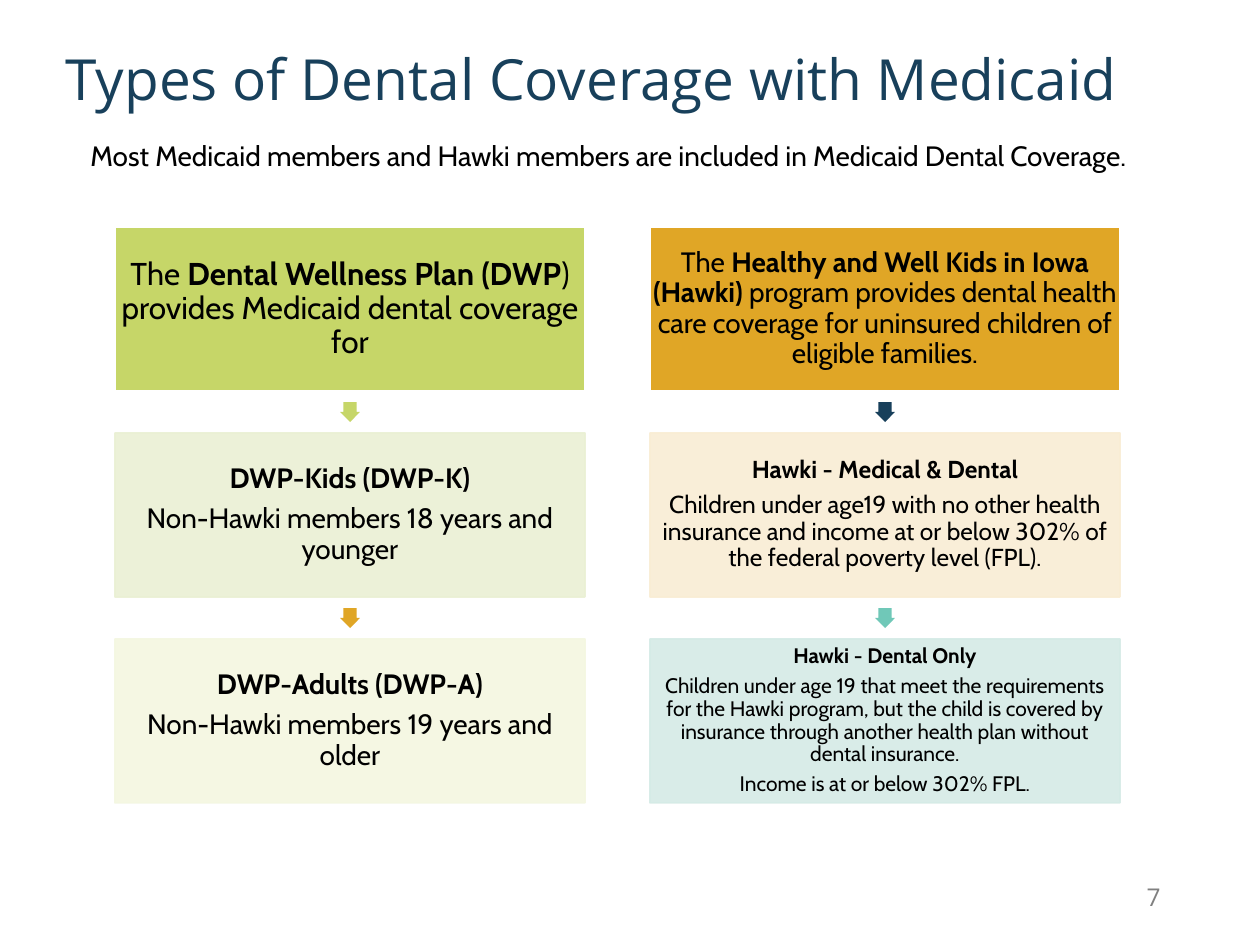
from lxml.etree import SubElement
from pptx import Presentation
from pptx.dml.color import RGBColor
from pptx.enum.shapes import MSO_SHAPE
from pptx.enum.text import MSO_ANCHOR, PP_ALIGN
from pptx.oxml.ns import qn
from pptx.util import Emu, Pt

EMU_PER_PX = 914400 / 126
BOX_WIDTH, BOX_HEIGHT, ROW_PITCH = 470, 164, 206
ARROW_SIZE = 20
TOP, LEFTS = 227, (115, 650)

# Each box: fill, line, opacity, text size, inset, paragraphs of (text, bold) runs
DWP_BOXES = [
    ("C6D668", "FFFFFF", 100, 18, 4, [
        [("The ", False), ("Dental Wellness Plan (DWP", True),
         (") provides Medicaid dental coverage for", False)]]),
    ("EAF0D4", "EAF0D4", 90, 16, 3, [
        [("DWP-Kids (DWP-K)", True)],
        [("Non-Hawki members 18 years and younger", False)]]),
    ("F4F7E1", "F4F7E1", 90, 16, 3, [
        [("DWP-Adults (DWP-A)", True)],
        [("Non-Hawki members 19 years and older", False)]]),
]
HAWKI_BOXES = [
    ("E0A626", "FFFFFF", 100, 16, 3, [
        [("The ", False), ("Healthy and Well Kids in Iowa (Hawki) ", True),
         ("program provides dental health care coverage for uninsured "
          "children of eligible families.", False)]]),
    ("F9EDD4", "F9EDD4", 90, 14, 3, [
        [("Hawki - Medical & Dental", True)],
        [("Children under age19 with no other health insurance and income at "
          "or below 302% of the federal poverty level (FPL).", False)]]),
    ("D5EBE6", "D5EBE6", 90, 12, 3, [
        [("Hawki - Dental Only", True)],
        [("Children under age 19 that meet the requirements for the Hawki "
          "program, but the child is covered by insurance through another "
          "health plan without dental insurance.", False)],
        [("Income is at or below 302% FPL.", False)]]),
]
COLUMNS = [(DWP_BOXES, ("C6D668", "E0A626")),
           (HAWKI_BOXES, ("18405B", "70C8B8"))]


def px(*lengths):
    return [Emu(round(length * EMU_PER_PX)) for length in lengths]


def color(hex_string):
    return RGBColor.from_string(hex_string)


def set_font(paragraph, name, size, hex_string):
    paragraph.font.name = name
    paragraph.font.size = Pt(size)
    paragraph.font.color.rgb = color(hex_string)


def add_filled_shape(slide, kind, box, fill, opacity=100):
    shape = slide.shapes.add_shape(kind, *px(*box))
    shape.shadow.inherit = False
    shape.fill.solid()
    shape.fill.fore_color.rgb = color(fill)
    shape.line.fill.background()
    set_opacity(shape, opacity)
    return shape


def set_opacity(shape, opacity):
    if opacity < 100:
        for element in shape.element.spPr.iter(qn("a:srgbClr")):
            if len(element) == 0:
                SubElement(element, qn("a:alpha")).set("val", str(opacity * 1000))


def add_title(slide, box):
    title = slide.shapes.title
    title.left, title.top, title.width, title.height = px(*box)
    frame = title.text_frame
    frame.text = "Types of Dental Coverage with Medicaid"
    frame.word_wrap = True
    frame.vertical_anchor = MSO_ANCHOR.MIDDLE
    paragraph = frame.paragraphs[0]
    paragraph.alignment = PP_ALIGN.LEFT
    paragraph.line_spacing = 0.9
    set_font(paragraph, "Open Sans", 32.4, "18405B")


def add_text(slide, box, text, name, size, hex_string, alignment):
    frame = slide.shapes.add_textbox(*px(*box)).text_frame
    frame.word_wrap = True
    paragraph = frame.paragraphs[0]
    paragraph.text = text
    paragraph.alignment = alignment
    set_font(paragraph, name, size, hex_string)


def add_coverage_box(slide, box, content):
    fill, line, opacity, size, inset, paragraphs = content
    shape = add_filled_shape(slide, MSO_SHAPE.RECTANGLE, box, fill)
    shape.line.color.rgb = color(line)
    shape.line.width = Pt(1)
    set_opacity(shape, opacity)

    frame = shape.text_frame
    frame.word_wrap = True
    frame.vertical_anchor = MSO_ANCHOR.MIDDLE
    (frame.margin_left, frame.margin_top,
     frame.margin_right, frame.margin_bottom) = px(*[inset] * 4)
    for index, runs in enumerate(paragraphs):
        paragraph = frame.add_paragraph() if index else frame.paragraphs[0]
        paragraph.alignment = PP_ALIGN.CENTER
        paragraph.line_spacing = 0.9
        paragraph.space_after = Pt(size * 0.35)
        set_font(paragraph, "Cabin", size, "000000")
        for text, bold in runs:
            run = paragraph.add_run()
            run.text = text
            run.font.bold = bold


def add_column(slide, left, top, boxes, arrow_colors):
    for row, content in enumerate(boxes):
        box = (left, top + row * ROW_PITCH, BOX_WIDTH, BOX_HEIGHT)
        add_coverage_box(slide, box, content)

    # Arrows centred in the gaps between boxes
    arrow_left = left + (BOX_WIDTH - ARROW_SIZE) // 2
    gap = ROW_PITCH - BOX_HEIGHT
    for row, fill in enumerate(arrow_colors):
        arrow_top = top + row * ROW_PITCH + BOX_HEIGHT + (gap - ARROW_SIZE) // 2
        arrow = add_filled_shape(slide, MSO_SHAPE.RIGHT_ARROW,
                                 (arrow_left, arrow_top, ARROW_SIZE, ARROW_SIZE), fill)
        arrow.rotation = 90
        arrow.adjustments[0] = 0.67


def main():
    presentation = Presentation()
    presentation.slide_width, presentation.slide_height = px(1260, 945)
    slide = presentation.slides.add_slide(presentation.slide_layouts[5])

    # Heading
    add_title(slide, (53, 9, 1167, 146))
    add_text(slide, (78, 132, 1142, 47),
             "Most Medicaid members and Hawki members are included in "
             "Medicaid Dental Coverage.", "Cabin", 16, "000000", PP_ALIGN.LEFT)

    # Coverage columns
    for left, (boxes, arrow_colors) in zip(LEFTS, COLUMNS):
        add_column(slide, left, TOP, boxes, arrow_colors)

    # Page number
    add_text(slide, (890, 876, 283, 50), "7", "Open Sans", 14, "808080",
             PP_ALIGN.RIGHT)
    presentation.save("out.pptx")


if __name__ == "__main__":
    main()
